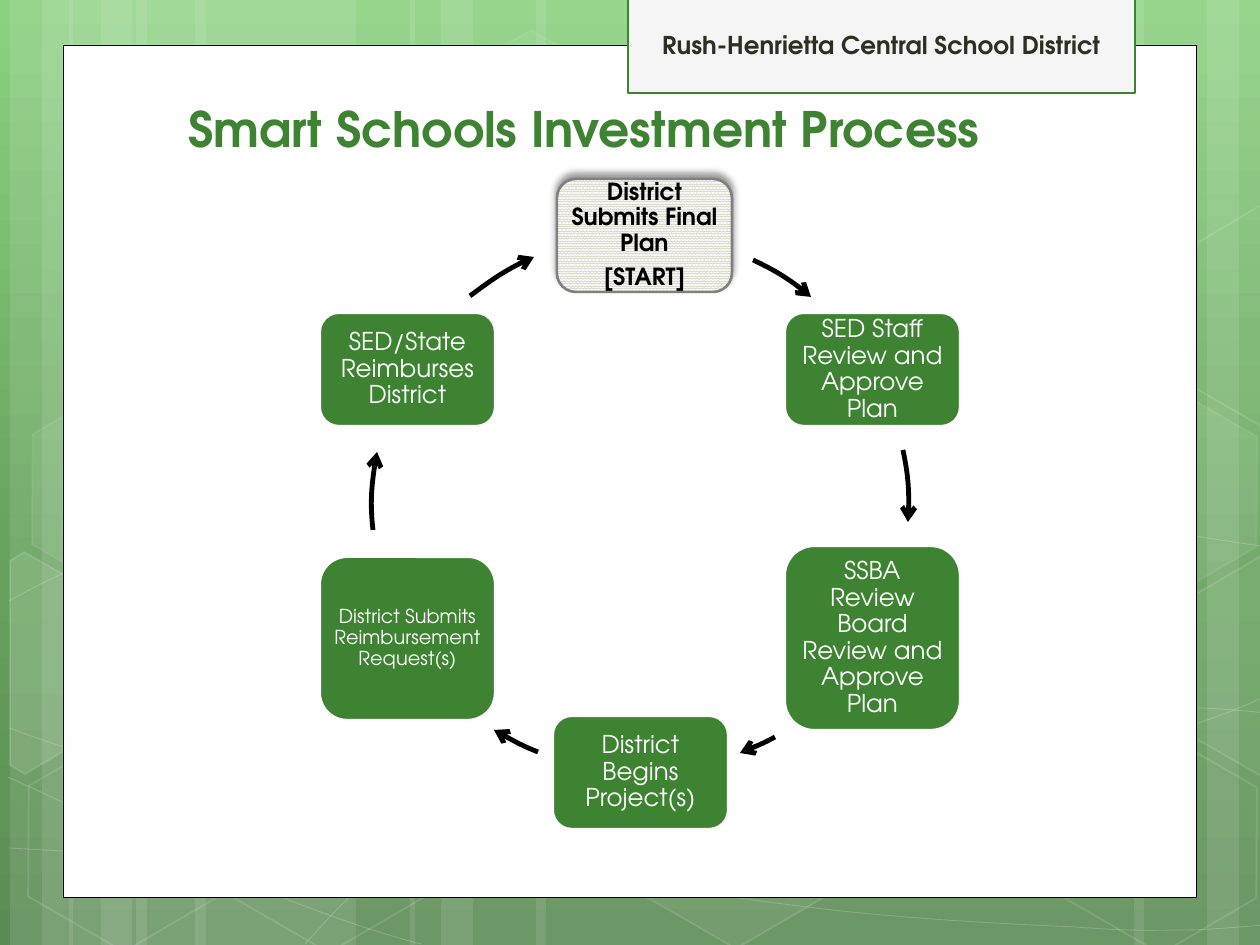
from copy import deepcopy

from lxml.etree import SubElement
from pptx import Presentation
from pptx.dml.color import RGBColor
from pptx.enum.dml import MSO_PATTERN
from pptx.enum.shapes import MSO_SHAPE
from pptx.enum.text import MSO_ANCHOR, PP_ALIGN
from pptx.oxml.ns import qn
from pptx.util import Emu, Pt

PX = 914400 / 126
PAGE_W, PAGE_H = 1260, 945
FONT = "TeX Gyre Adventor"
GREEN, WHITE, BLACK = "3D8332", "FFFFFF", "000000"

BACKGROUND = [(0, "8CD181"), (0.62, "65A05C"), (1, "5C8C55")]
STRIPES = [(136, 220), (10, 63), (42, 105), (195, 220), (69, 63), (101, 105),
           (924, 220), (1207, 53), (1134, 105), (536, 388), (410, 63), (441, 105)]
# Each curve: a start point, then two control points and an end point per segment
WAVES = [
    [(9, 848), (77, 852), (145, 856), (239, 854), (334, 853), (451, 850), (577, 838),
     (703, 825), (882, 801), (998, 777), (1113, 753), (1231, 716), (1269, 694)],
    [(9, 601), (45, 581), (82, 562), (152, 543), (224, 524), (326, 499), (437, 488),
     (549, 479), (685, 478), (824, 488), (963, 498), (1193, 537), (1269, 547)],
    [(8, 777), (160, 847), (311, 916), (421, 944)],
    [(9, 728), (48, 742), (88, 756), (161, 776), (234, 795), (344, 827), (450, 848),
     (554, 869), (687, 892), (791, 905), (896, 919), (1008, 924), (1075, 927),
     (1140, 932), (1158, 930), (1191, 930), (1223, 929), (1246, 926), (1269, 925)],
    [(305, 944), (328, 919), (350, 893), (381, 871), (411, 848), (454, 823), (489, 805),
     (524, 788), (546, 780), (592, 767), (638, 755), (722, 737), (766, 728),
     (811, 720), (818, 720), (857, 717), (896, 713), (958, 709), (1000, 708),
     (1045, 707), (1116, 708), (1116, 708), (1144, 708), (1173, 708), (1201, 708),
     (1223, 709), (1245, 711), (1256, 712), (1260, 713), (1264, 712), (1268, 713)],
]
# left, top, fill opacity, line opacity
HEXAGONS = [(421, 45, 4, 8), (626, 742, 6, 12), (14, 745, 0, 12), (18, 393, 7, 8),
            (219, 746, 0, 12), (949, 571, 10, 12), (1051, 747, 0, 12), (1051, 396, 7, 8)]
# points, fill opacity
CUT_HEXAGONS = [
    ([(10, 561), (24, 552), (121, 607), (120, 718), (25, 774), (10, 765)], 10),
    ([(1167, 611), (1261, 556), (1271, 562), (1271, 772), (1263, 777), (1167, 722)], 4),
    ([(1167, 261), (1261, 205), (1273, 212), (1271, 422), (1263, 427), (1167, 372)], 0),
]

HEADER = "Rush-Henrietta Central School District"
TITLE = "Smart Schools Investment Process"
START = ["District Submits Final Plan", "[START]"]
STEP_W, STEP_H = 175, 113
LEFT, MIDDLE, RIGHT = 320, 553, 785
# left, top, height, text size, text
STEPS = [
    (RIGHT, 313, STEP_H, 14, "SED Staff Review and Approve Plan"),
    (RIGHT, 546, 184, 14, "SSBA Review Board Review and Approve Plan"),
    (MIDDLE, 716, STEP_H, 14, "District Begins Project(s)"),
    (LEFT, 557, 163, 11, "District Submits Reimbursement Request(s)"),
    (LEFT, 313, STEP_H, 14, "SED/State Reimburses District"),
]
ARROWS = [
    [(753, 260), (774, 270), (794, 282), (811, 297)],
    [(903, 450), (908, 474), (910, 498), (908, 522)],
    [(775, 737), (764, 743), (752, 748), (740, 753)],
    [(538, 752), (523, 746), (508, 738), (494, 730)],
    [(373, 530), (370, 504), (372, 478), (377, 452)],
    [(470, 296), (490, 281), (510, 267), (534, 257)],
]

deck = Presentation()
deck.slide_width, deck.slide_height = Emu(round(PAGE_W * PX)), Emu(round(PAGE_H * PX))
page = deck.slides.add_slide(deck.slide_layouts[6])


def px(*values):
    return [Emu(round(value * PX)) for value in values]


def rgb(colour):
    return RGBColor.from_string(colour)


def paint(fill, colour, parent, opacity=100):
    """Give a solid fill, held by the XML element parent, a colour and an opacity."""
    fill.solid()
    fill.fore_color.rgb = rgb(colour)
    if opacity < 100:
        tone = parent.find(qn("a:solidFill")).find(qn("a:srgbClr"))
        SubElement(tone, qn("a:alpha"), val=str(opacity * 1000))


def style(shape, fill=None, fill_opacity=100, line=None, weight=1, line_opacity=100):
    properties = shape.element.spPr
    shape.shadow.inherit = False
    if fill and fill_opacity:
        paint(shape.fill, fill, properties, fill_opacity)
    else:
        shape.fill.background()
    if line:
        shape.line.width = Pt(weight)
        paint(shape.line.fill, line, properties.find(qn("a:ln")), line_opacity)
    else:
        shape.line.fill.background()
    return shape


def add_shape(kind, left, top, width, height, **look):
    return style(page.shapes.add_shape(kind, *px(left, top, width, height)), **look)


def add_outline(points, close, **look):
    builder = page.shapes.build_freeform(*points[0], scale=PX)
    builder.add_line_segments(points[1:], close=close)
    return style(builder.convert_to_shape(), **look)


def add_curve(points, **look):
    """Draw an outline, then turn each three line segments into one Bezier segment."""
    shape = add_outline(points, False, **look)
    outline = next(shape.element.iter(qn("a:path")))
    lines = outline.findall(qn("a:lnTo"))
    for start in range(0, len(lines), 3):
        bezier = SubElement(outline, qn("a:cubicBezTo"))
        for line in lines[start:start + 3]:
            bezier.append(line[0])
            outline.remove(line)
    return shape


def write(box, texts, size, colour, bold=False, anchor=MSO_ANCHOR.MIDDLE,
          inset=6, line_spacing=1.0, after=0):
    frame = box.text_frame
    frame.word_wrap = True
    frame.vertical_anchor = anchor
    for side in ("left", "top", "right", "bottom"):
        setattr(frame, f"margin_{side}", px(inset)[0])
    for number, text in enumerate(texts):
        para = frame.add_paragraph() if number else frame.paragraphs[0]
        para.alignment = PP_ALIGN.CENTER
        para.line_spacing = line_spacing
        para.space_after = Pt(after)
        span = para.add_run()
        span.text = text
        for name, value in {"name": FONT, "size": Pt(size), "bold": bold}.items():
            setattr(span.font, name, value)
        span.font.color.rgb = rgb(colour)


backdrop = page.background.fill
backdrop.gradient()
backdrop.gradient_angle = 270
stop_list = next(page.element.iter(qn("a:gsLst")))
stop_list.append(deepcopy(stop_list[-1]))
for stop, (position, colour) in zip(backdrop.gradient_stops, BACKGROUND):
    stop.position = position
    stop.color.rgb = rgb(colour)

for left, width in STRIPES:
    add_shape(MSO_SHAPE.RECTANGLE, left, 0, width, PAGE_H, fill=WHITE, fill_opacity=10)
for wave in WAVES:
    add_curve(wave, line=WHITE, weight=0.5, line_opacity=20)
for left, top, fill_opacity, line_opacity in HEXAGONS:
    hexagon = add_shape(MSO_SHAPE.HEXAGON, left, top, 220, 192, fill=WHITE,
                        fill_opacity=fill_opacity, line=WHITE, line_opacity=line_opacity)
    hexagon.adjustments[0] = 0.285
    hexagon.rotation = 30
for points, opacity in CUT_HEXAGONS:
    add_outline(points, True, fill=WHITE, fill_opacity=opacity, line=WHITE, line_opacity=12)

add_shape(MSO_SHAPE.RECTANGLE, 63, 45, 1134, 853, fill=WHITE, line=BLACK, weight=0.5)
header = add_shape(MSO_SHAPE.RECTANGLE, 628, -3, 507, 96, fill="F5F5F5", line=GREEN, weight=1.25)
write(header, [HEADER], 14, "2E2E22", bold=True)
title = page.shapes.add_textbox(*px(100, 73, 968, 90))
write(title, [TITLE], 27.9, GREEN, bold=True, anchor=MSO_ANCHOR.BOTTOM)

start_box = add_shape(MSO_SHAPE.ROUNDED_RECTANGLE, 557, 179, STEP_W, STEP_H,
                      fill=WHITE, line="808080", weight=1.5)
start_box.fill.patterned()
start_box.fill.pattern = MSO_PATTERN.PERCENT_90
start_box.fill.fore_color.rgb = rgb("DDDCD0")
start_box.fill.back_color.rgb = rgb(WHITE)
shadow = SubElement(start_box.element.spPr.find(qn("a:effectLst")), qn("a:outerShdw"),
                    blurRad=str(int(Pt(4))), dist=str(int(Pt(3))), dir=str(270 * 60000),
                    rotWithShape="0")
SubElement(SubElement(shadow, qn("a:srgbClr"), val=BLACK), qn("a:alpha"), val="40000")
write(start_box, START, 13.5, BLACK, bold=True, inset=7, line_spacing=0.9, after=5)

for left, top, height, size, text in STEPS:
    step = add_shape(MSO_SHAPE.ROUNDED_RECTANGLE, left, top, STEP_W, height,
                     fill=GREEN, line=WHITE, weight=1.25)
    write(step, [text], size, WHITE, inset=size // 2, line_spacing=0.9, after=5)
for points in ARROWS:
    arrow = add_curve(points, line=BLACK, weight=2.75)
    SubElement(arrow.element.spPr.find(qn("a:ln")), qn("a:tailEnd"), type="arrow")

deck.save("out.pptx")
